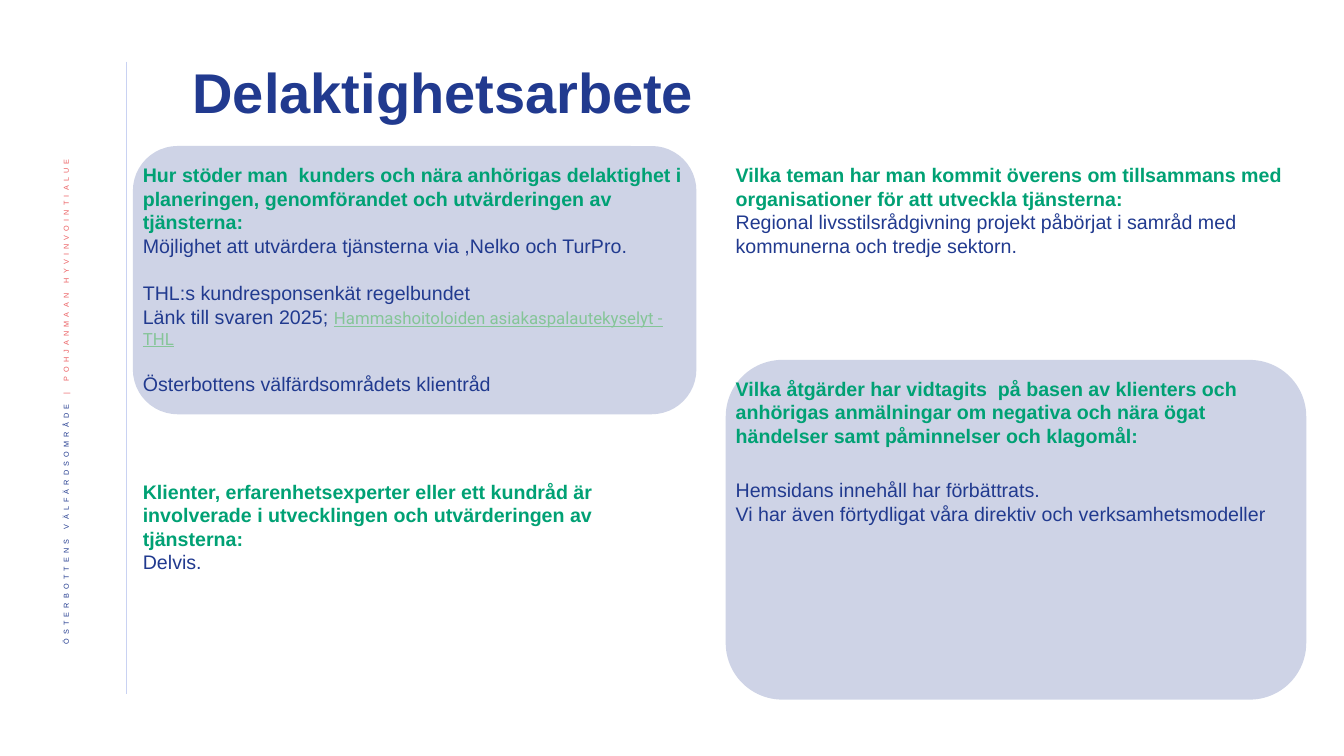
import lxml.etree
import pptx
import pptx.util
import pptx.dml.color
import pptx.enum.shapes
import pptx.enum.text
import pptx.oxml.ns

Cm, Pt = pptx.util.Cm, pptx.util.Pt
qn = pptx.oxml.ns.qn
INK = {"navy": "213A8F", "green": "00A174", "link": "85C598",
       "coral": "EB5C5F", "rule": "C9D2F2"}


def tint(name):
    return pptx.dml.color.RGBColor.from_string(INK[name])


def write(para, text, ink, size=14, bold=False, face="Arial"):
    run = para.add_run()
    run.text = text
    run.font.name = face
    run.font.size = Pt(size)
    run.font.bold = bold
    run.font.color.rgb = tint(ink)
    return run


deck = pptx.Presentation()
deck.slide_width, deck.slide_height = Cm(33.87), Cm(19.05)
slide = deck.slides.add_slide(deck.slide_layouts[5])
shapes = slide.shapes

# Vertical rule
rule = shapes.add_connector(pptx.enum.shapes.MSO_CONNECTOR.STRAIGHT,
                            Cm(3.18), Cm(1.55), Cm(3.18), Cm(17.48))
rule.line.color.rgb = tint("rule")
rule.line.width = Pt(0.5)
lxml.etree.SubElement(rule._element.spPr, qn("a:effectLst"))

# Sideways name of the area
side = shapes.add_textbox(Cm(1.07), Cm(3.61), Cm(1.32), Cm(14.55)).text_frame
side.word_wrap = True
side.vertical_anchor = pptx.enum.text.MSO_ANCHOR.MIDDLE
side._txBody.bodyPr.set("vert", "vert270")
para = side.paragraphs[0]
para.alignment = pptx.enum.text.PP_ALIGN.RIGHT
para.line_spacing = 0.9
for text, ink in [("ÖSTERBOTTENS VÄLFÄRDSOMRÅDE ", "navy"),
                  ("| POHJANMAAN HYVINVOINTIALUE ", "coral")]:
    props = write(para, text, ink, 9).font._element
    props.set("baseline", "30000")
    props.set("spc", "300")

# Title
title = shapes.title
title.left, title.top, title.width, title.height = Cm(4.6), Cm(1.14), Cm(25.35), Cm(2.51)
title.text_frame.vertical_anchor = pptx.enum.text.MSO_ANCHOR.MIDDLE
para = title.text_frame.paragraphs[0]
para.alignment = pptx.enum.text.PP_ALIGN.LEFT
para.line_spacing = 0.9
write(para, "Delaktighetsarbete", "navy", 40, True)

# Rounded panels
LEFT, RIGHT = (3.35, 14.2), (18.29, 14.63)
for (x, wide), y, high in [(LEFT, 3.68, 6.76), (RIGHT, 9.07, 8.56)]:
    panel = shapes.add_shape(pptx.enum.shapes.MSO_SHAPE.ROUNDED_RECTANGLE,
                             Cm(x), Cm(y), Cm(wide), Cm(high))
    panel.shadow.inherit = False
    panel.line.fill.background()
    panel.fill.solid()
    panel.fill.fore_color.rgb = tint("navy")
    paint = panel._element.spPr.find(".//" + qn("a:srgbClr"))
    lxml.etree.SubElement(paint, qn("a:alpha")).set("val", "22000")

# Questions with answers: column, top, height, question, (space before, answer, link)
blocks = [
    (LEFT, 3.99, 6.76,
     "Hur stöder man  kunders och nära anhörigas delaktighet i planeringen, "
     "genomförandet och utvärderingen av tjänsterna:",
     [(0, "Möjlighet att utvärdera tjänsterna via ,Nelko och TurPro.", ""),
      (17, "THL:s kundresponsenkät regelbundet", ""),
      (0, "Länk till svaren 2025; ", "Hammashoitoloiden asiakaspalautekyselyt - THL"),
      (17, "Österbottens välfärdsområdets klientråd", "")]),
    (RIGHT, 3.99, 2.64,
     "Vilka teman har man kommit överens om tillsammans med organisationer "
     "för att utveckla tjänsterna:",
     [(0, "Regional livsstilsrådgivning projekt påbörjat i samråd med "
          "kommunerna och tredje sektorn.", "")]),
    (LEFT, 11.96, 2.64,
     "Klienter, erfarenhetsexperter eller ett kundråd är involverade i "
     "utvecklingen och utvärderingen av tjänsterna:",
     [(0, "Delvis.", "")]),
    (RIGHT, 9.37, 3.84,
     "Vilka åtgärder har vidtagits  på basen av klienters och anhörigas "
     "anmälningar om negativa och nära ögat händelser samt påminnelser och klagomål:",
     [(22, "Hemsidans innehåll har förbättrats.", ""),
      (0, "Vi har även förtydligat våra direktiv och verksamhetsmodeller", "")]),
]
for (x, wide), y, high, ask, answers in blocks:
    frame = shapes.add_textbox(Cm(x), Cm(y), Cm(wide), Cm(high)).text_frame
    frame.word_wrap = True
    write(frame.paragraphs[0], ask, "green", bold=True)
    for gap, text, link in answers:
        para = frame.add_paragraph()
        para.space_before = Pt(gap)
        write(para, text, "navy")
        if link:
            write(para, link, "link", 12, face="Roboto").font.underline = True

deck.save("out.pptx")
